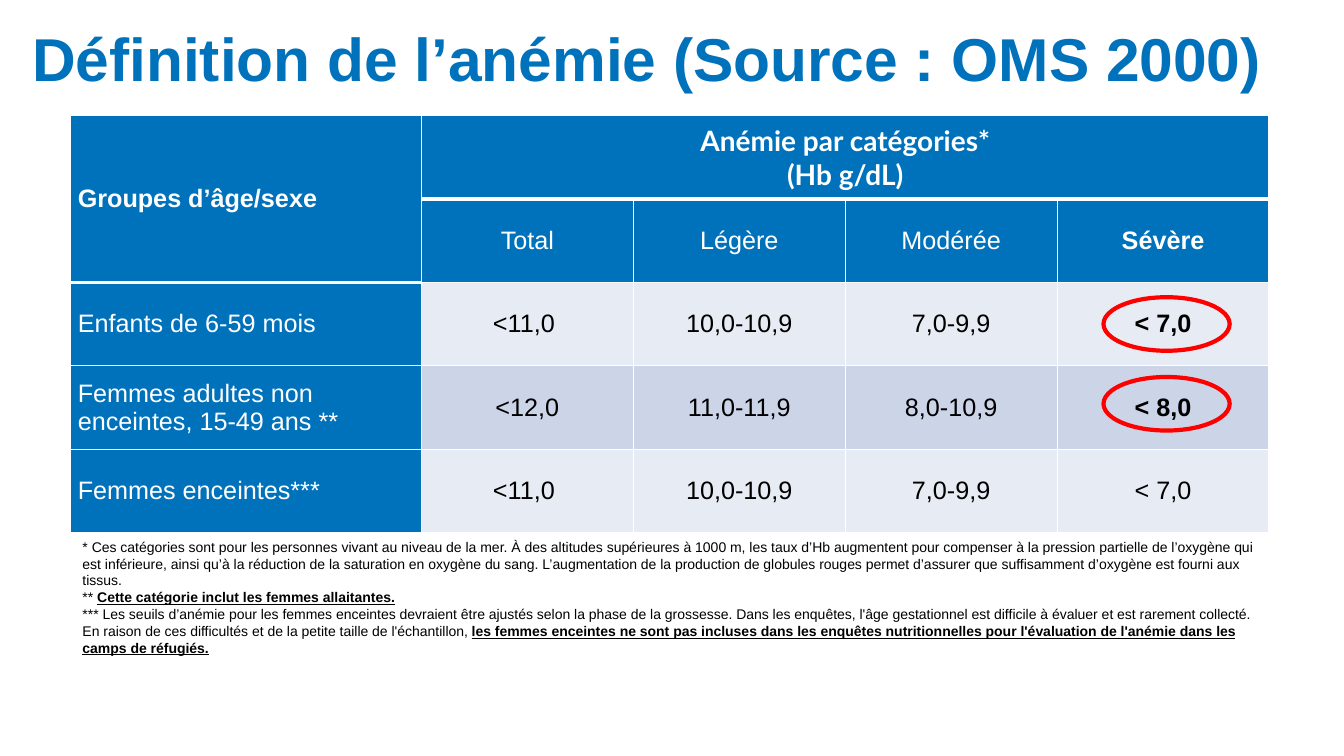
from lxml.etree import SubElement
from pptx import Presentation
from pptx.dml.color import RGBColor
from pptx.enum.shapes import MSO_SHAPE
from pptx.enum.text import MSO_ANCHOR, PP_ALIGN
from pptx.oxml.ns import qn
from pptx.util import Cm, Pt

COLORS = {"blue": "0072BC", "white": "FFFFFF", "black": "000000",
          "light": "E7EBF3", "band": "CCD5E7", "red": "FF0000"}

FORMATS = {
    "title": {"name": "Arial", "size": Pt(43.2), "bold": True},
    "group": {"name": "Lato", "size": Pt(20), "bold": True},
    "cell": {"name": "Arial", "size": Pt(18), "bold": False},
    "strong": {"name": "Arial", "size": Pt(18), "bold": True},
    "note": {"name": "Arial", "size": Pt(10), "bold": False},
    "key": {"name": "Arial", "size": Pt(10), "bold": True, "underline": True},
}

ROWS = [
    ["Groupes d’âge/sexe", "Anémie par catégories*\n(Hb g/dL)", "", "", ""],
    ["", "Total", "Légère", "Modérée", "Sévère"],
    ["Enfants de 6-59 mois", "<11,0 ", "10,0-10,9", "7,0-9,9", "< 7,0"],
    ["Femmes adultes non enceintes, 15-49 ans **",
     "<12,0", "11,0-11,9", "8,0-10,9", "< 8,0"],
    ["Femmes enceintes***", "<11,0 ", "10,0-10,9", "7,0-9,9", "< 7,0"],
]
STRONG = {(0, 0), (1, 4), (2, 4), (3, 4)}

NOTES = [
    [("* Ces catégories sont pour les personnes vivant au niveau de la mer. "
      "À des altitudes supérieures à 1000 m, les taux d’Hb augmentent pour "
      "compenser à la pression partielle de l’oxygène qui est inférieure, "
      "ainsi qu’à la réduction de la saturation en oxygène du sang. "
      "L’augmentation de la production de globules rouges permet d’assurer "
      "que suffisamment d’oxygène est fourni aux tissus.", "note")],
    [("** ", "note"),
     ("Cette catégorie inclut les femmes allaitantes.", "key")],
    [("*** Les seuils d’anémie pour les femmes enceintes devraient être "
      "ajustés selon la phase de la grossesse. Dans les enquêtes, l'âge "
      "gestationnel est difficile à évaluer et est rarement collecté. "
      "En raison de ces difficultés et de la petite taille de "
      "l'échantillon, ", "note"),
     ("les femmes enceintes ne sont pas incluses dans les enquêtes "
      "nutritionnelles pour l'évaluation de l'anémie dans les camps de "
      "réfugiés.", "key")],
]


def rgb(color):
    return RGBColor.from_string(COLORS[color])


def add_run(p, text, fmt, color):
    r = p.add_run()
    r.text = text
    for name, value in FORMATS[fmt].items():
        setattr(r.font, name, value)
    r.font.color.rgb = rgb(color)


def paragraphs(tf, count):
    return [tf.paragraphs[0]] + [tf.add_paragraph() for _ in range(count - 1)]


def add_text(s, box, lines, color):
    tf = s.shapes.add_textbox(*map(Cm, box)).text_frame
    tf.word_wrap = True
    for p, line in zip(paragraphs(tf, len(lines)), lines):
        for text, fmt in line:
            add_run(p, text, fmt, color)
    return tf


def add_title(s, box):
    text = "Définition de l’anémie (Source : OMS 2000)"
    tf = add_text(s, box, [[(text, "title")]], "blue")
    for side in ("left", "top", "right", "bottom"):
        setattr(tf, f"margin_{side}", 0)
    tf.vertical_anchor = MSO_ANCHOR.BOTTOM
    tf.paragraphs[0].line_spacing = 0.9


def set_borders(cell, row, col):
    edge = 1 if col else 2
    heavy = {"T": row == edge, "B": row + 1 == edge or (row, col) == (0, 0)}
    for side in "LRTB":
        width = Pt(3 if heavy.get(side) else 1)
        ln = SubElement(cell._tc.get_or_add_tcPr(), qn(f"a:ln{side}"), w=str(width))
        fill = SubElement(ln, qn("a:solidFill"))
        SubElement(fill, qn("a:srgbClr"), val=COLORS["white"])


def fill_cell(cell, row, col):
    header = row < 2 or col == 0
    group = (row, col) == (0, 1)
    set_borders(cell, row, col)
    cell.fill.solid()
    cell.fill.fore_color.rgb = rgb("blue" if header else "band" if row == 3 else "light")
    cell.vertical_anchor = MSO_ANCHOR.MIDDLE
    cell.margin_left = cell.margin_right = Cm(0.13 if group else 0.18)
    cell.margin_top = cell.margin_bottom = 0
    if not ROWS[row][col]:
        return
    fmt = "group" if group else "strong" if (row, col) in STRONG else "cell"
    lines = ROWS[row][col].split("\n")
    for p, text in zip(paragraphs(cell.text_frame, len(lines)), lines):
        p.alignment = PP_ALIGN.CENTER if col else PP_ALIGN.LEFT
        add_run(p, text, fmt, "white" if header else "black")


def add_threshold_table(s, box):
    left, top, width, height = box
    first = 8.84
    table = s.shapes.add_table(len(ROWS), len(ROWS[0]), *map(Cm, box)).table
    table.horz_banding = False
    for i, column in enumerate(table.columns):
        column.width = Cm((width - first) / 4 if i else first)
    for row in table.rows:
        row.height = Cm(height / len(ROWS))
    table.cell(0, 0).merge(table.cell(1, 0))
    table.cell(0, 1).merge(table.cell(0, 4))
    for row, texts in enumerate(ROWS):
        for col in range(len(texts)):
            fill_cell(table.cell(row, col), row, col)
    for offset in (6.58, 4.57):
        add_ring(s, (left + 26.03, top + offset, 3.18, 1.35))


def add_ring(s, box):
    sp = s.shapes.add_shape(MSO_SHAPE.OVAL, *map(Cm, box))
    sp.shadow.inherit = False
    sp.fill.background()
    sp.line.color.rgb = rgb("red")
    sp.line.width = Pt(3)


def main():
    prs = Presentation()
    prs.slide_width, prs.slide_height = Cm(33.87), Cm(19.05)
    s = prs.slides.add_slide(prs.slide_layouts[6])
    add_title(s, (0.81, 0.25, 32.44, 2.13))
    add_threshold_table(s, (1.78, 2.92, 30.2, 10.5))
    add_text(s, (1.83, 13.44, 30.1, 3.25), NOTES, "black")
    prs.save("out.pptx")


if __name__ == "__main__":
    main()
